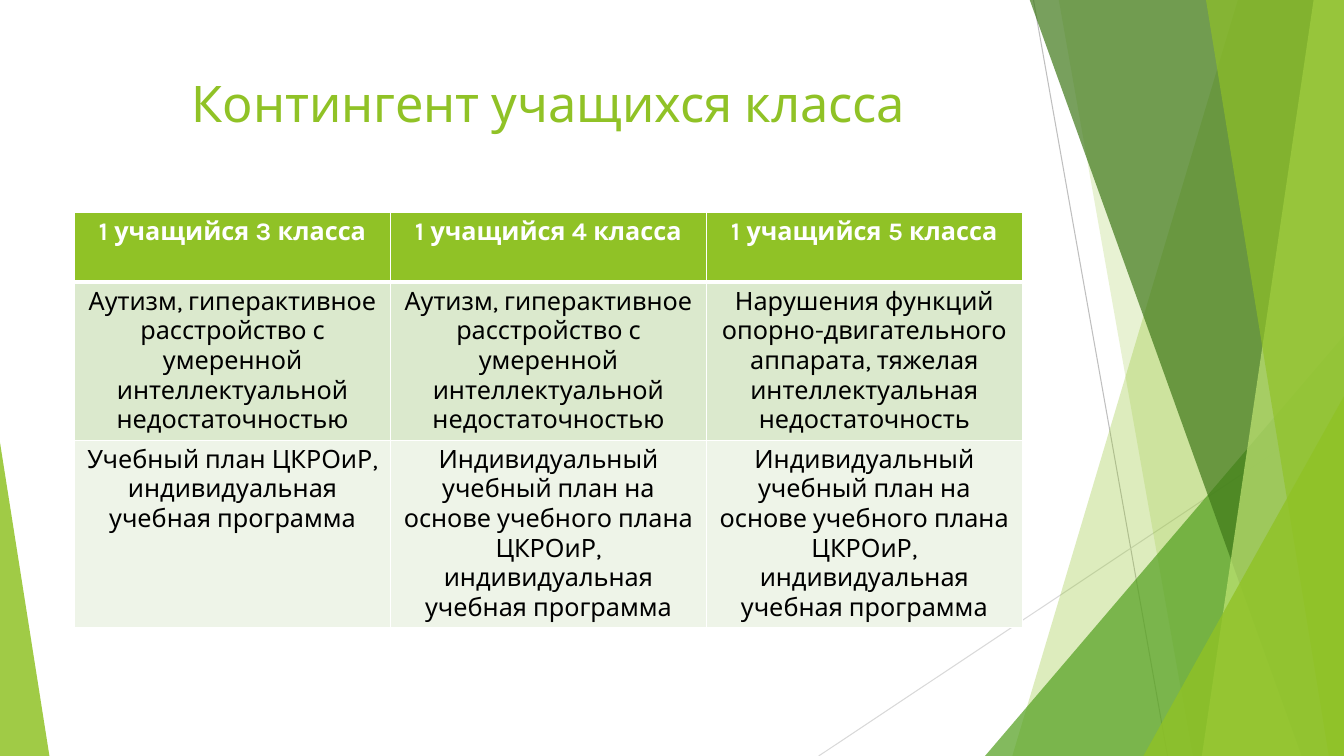
from dataclasses import dataclass

from lxml import etree
from pptx import Presentation
from pptx.dml.color import RGBColor
from pptx.enum import shapes, text
from pptx.oxml import ns
from pptx.util import Inches, Pt

WIDTH, HEIGHT = 13.33, 7.5
LEFT, CONTENT_WIDTH = 0.74, 9.4


@dataclass(frozen=True)
class Theme:
    font: str = "Karla"
    green: str = "90C226"
    mid_green: str = "54A021"
    dark_green: str = "3F7819"
    pale_green: str = "C0E474"
    band_dark: str = "DBE9CD"
    band_light: str = "EEF4E8"
    white: str = "FFFFFF"
    black: str = "000000"
    line_dark: str = "BFBFBF"
    line_light: str = "D9D9D9"
    title_size: int = 36
    table_size: int = 18


THEME = Theme()


@dataclass(frozen=True)
class Ray:
    start: tuple[float, float]
    end: tuple[float, float]
    color: str


@dataclass(frozen=True)
class Blade:
    """Band reaching the right slide edge, with a slanted left side."""
    top_x: float
    bottom_x: float
    color: str
    opacity: int


@dataclass(frozen=True)
class Corner:
    """Triangle on the bottom edge; apex is 0 for left, 1 for right."""
    left: float
    top: float
    width: float
    apex: int
    color: str
    opacity: int


@dataclass(frozen=True)
class RowStyle:
    height: float
    fill: str
    color: str
    bold: bool
    top_line: float
    bottom_line: float


DECOR = [
    Ray((10.25, 0), (11.58, HEIGHT), THEME.line_dark),
    Ray((WIDTH, 4.03), (8.12, HEIGHT), THEME.line_light),
    Blade(12.28, 10.04, THEME.green, 30),
    Blade(10.5, 11.83, THEME.green, 20),
    Corner(9.77, 3.33, 3.56, 1, THEME.mid_green, 72),
    Blade(10.21, 12.91, THEME.dark_green, 70),
    Blade(13.03, 11.92, THEME.pale_green, 70),
    Blade(11.96, 13.18, THEME.green, 65),
    Corner(11.34, 3.93, 1.99, 1, THEME.green, 80),
    Corner(0, 4.39, 0.49, 0, THEME.green, 85),
]

ROW_STYLES = [
    RowStyle(0.69, THEME.green, THEME.white, True, 1, 3),
    RowStyle(1.56, THEME.band_dark, THEME.black, False, 3, 1),
    RowStyle(1.86, THEME.band_light, THEME.black, False, 1, 1),
]

AUTISM = "Аутизм, гиперактивное расстройство с умеренной интеллектуальной недостаточностью"
OWN_PLAN = ("Индивидуальный учебный план на основе учебного плана ЦКРОиР, "
            "индивидуальная учебная программа")
ROWS = [
    [f"1 учащийся {grade} класса" for grade in (3, 4, 5)],
    [AUTISM, AUTISM, "Нарушения функций опорно-двигательного аппарата, "
     "тяжелая интеллектуальная недостаточность"],
    ["Учебный план ЦКРОиР, индивидуальная учебная программа", OWN_PLAN, OWN_PLAN],
]


def rgb(color: str) -> RGBColor:
    return RGBColor.from_string(color)


def write(tf, content: str, *, size: int, color: str, bold: bool = False) -> None:
    p = tf.paragraphs[0]
    p.alignment = text.PP_ALIGN.CENTER
    r = p.add_run()
    r.text = content
    r.font.name = THEME.font
    r.font.size = Pt(size)
    r.font.bold = bold
    r.font.color.rgb = rgb(color)


def paint(sp, color: str, opacity: int) -> None:
    """Give a shape a see-through fill with no outline or shadow."""
    sp.shadow.inherit = False
    sp.line.fill.background()
    sp.fill.solid()
    sp.fill.fore_color.rgb = rgb(color)
    clr = sp.fill._xPr.find(".//" + ns.qn("a:srgbClr"))
    etree.SubElement(clr, ns.qn("a:alpha"), val=str(opacity * 1000))


def draw_ray(slide, ray: Ray) -> None:
    line = slide.shapes.add_connector(
        shapes.MSO_CONNECTOR.STRAIGHT, *map(Inches, ray.start + ray.end))
    line.line.color.rgb = rgb(ray.color)
    line.line.width = Pt(0.75)
    etree.SubElement(line._element.spPr, ns.qn("a:effectLst"))


def draw_blade(slide, blade: Blade) -> None:
    top = Inches(-0.01)
    right, bottom = Inches(WIDTH), Inches(HEIGHT)
    builder = slide.shapes.build_freeform(Inches(blade.top_x), top)
    builder.add_line_segments(
        [(right, top), (right, bottom), (Inches(blade.bottom_x), bottom)], close=True)
    paint(builder.convert_to_shape(), blade.color, blade.opacity)


def draw_corner(slide, corner: Corner) -> None:
    sp = slide.shapes.add_shape(
        shapes.MSO_SHAPE.ISOSCELES_TRIANGLE, Inches(corner.left), Inches(corner.top),
        Inches(corner.width), Inches(HEIGHT - corner.top))
    sp.adjustments[0] = corner.apex
    paint(sp, corner.color, corner.opacity)


def set_borders(cell, top: float, bottom: float) -> None:
    tc_pr = cell._tc.get_or_add_tcPr()
    widths = {"lnL": 1, "lnR": 1, "lnT": top, "lnB": bottom}
    for index, (side, width) in enumerate(widths.items()):
        ln = etree.Element(ns.qn(f"a:{side}"), w=str(Pt(width)))
        fill = etree.SubElement(ln, ns.qn("a:solidFill"))
        etree.SubElement(fill, ns.qn("a:srgbClr"), val=THEME.white)
        tc_pr.insert(index, ln)


def draw_title(slide) -> None:
    title = slide.shapes.title
    title.left, title.top = Inches(LEFT), Inches(0.67)
    title.width, title.height = Inches(CONTENT_WIDTH), Inches(1.44)
    title.text_frame.vertical_anchor = text.MSO_ANCHOR.TOP
    write(title.text_frame, "Контингент учащихся класса",
          size=THEME.title_size, color=THEME.green)
    slide.shapes._spTree.append(title._element)  # in front of the decoration


def draw_table(slide) -> None:
    height = sum(style.height for style in ROW_STYLES)
    table = slide.shapes.add_table(
        len(ROWS), len(ROWS[0]), Inches(LEFT), Inches(2.11),
        Inches(CONTENT_WIDTH), Inches(height)).table
    for row, style, contents in zip(table.rows, ROW_STYLES, ROWS):
        row.height = Inches(style.height)
        for cell, content in zip(row.cells, contents):
            cell.fill.solid()
            cell.fill.fore_color.rgb = rgb(style.fill)
            set_borders(cell, style.top_line, style.bottom_line)
            write(cell.text_frame, content, size=THEME.table_size,
                  color=style.color, bold=style.bold)


def main() -> None:
    prs = Presentation()
    prs.slide_width, prs.slide_height = Inches(WIDTH), Inches(HEIGHT)
    slide = prs.slides.add_slide(prs.slide_layouts.get_by_name("Title Only"))
    draw = {Ray: draw_ray, Blade: draw_blade, Corner: draw_corner}
    for item in DECOR:
        draw[type(item)](slide, item)
    draw_title(slide)
    draw_table(slide)
    prs.save("out.pptx")


if __name__ == "__main__":
    main()
